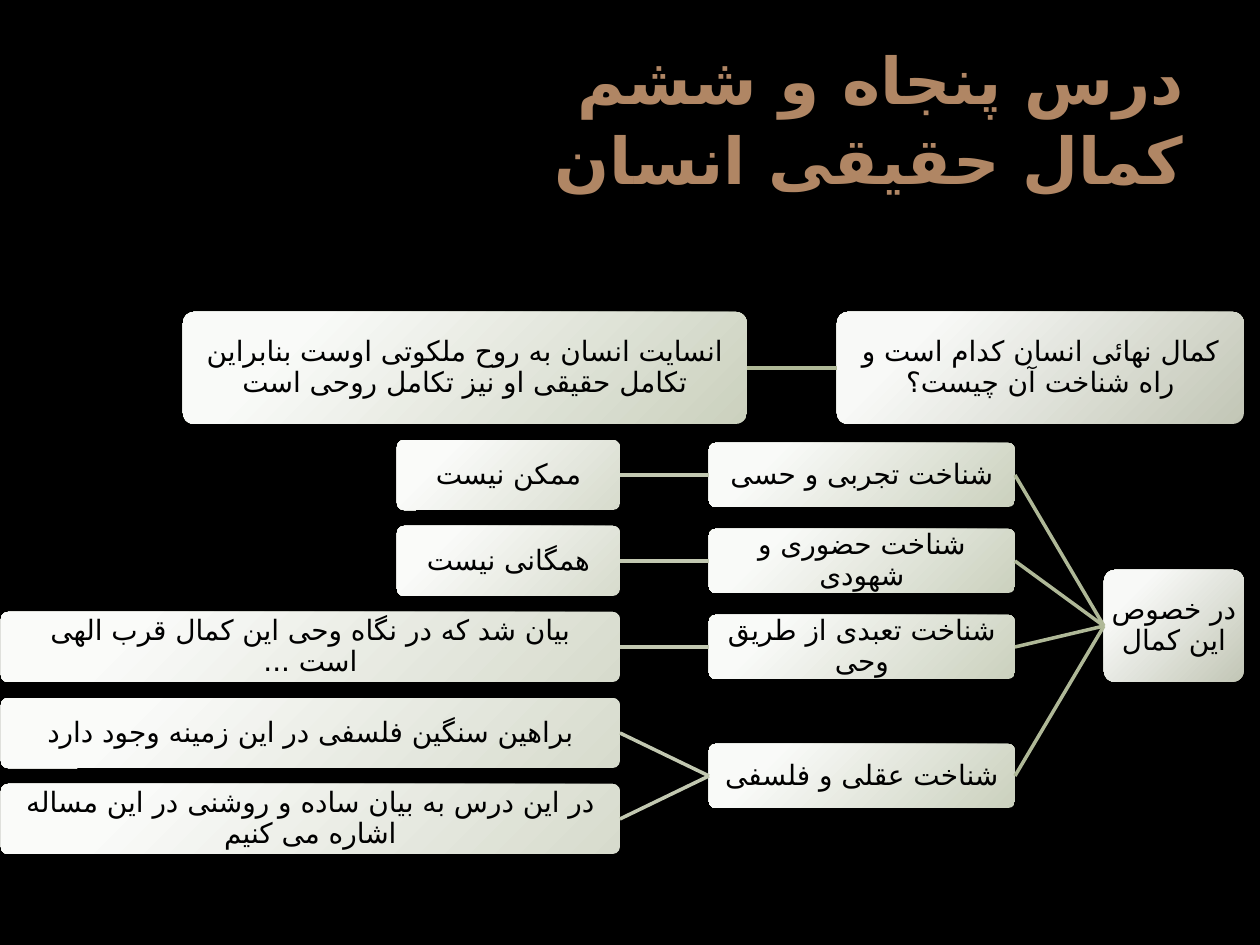
import pptx
import pptx.dml.color
import pptx.enum.shapes
import pptx.enum.text
import pptx.oxml
import pptx.oxml.ns
import pptx.util
from dataclasses import dataclass

SCALE = 914400 // 126
A_NS = pptx.oxml.ns.nsdecls("a")
LEFT, RIGHT = 1, 3


@dataclass(frozen=True)
class Theme:
    background: str = "000000"
    title_color: str = "B08664"
    title_font: str = "Noto Sans"
    title_size: float = 36.9
    title_spacing: float = 1.04
    text_color: str = "000000"
    text_font: str = "Vollkorn"
    text_size: float = 16
    text_spacing: float = 0.92
    persian_font: str = "DejaVu Sans"
    line_width: float = 2
    fills: tuple = (("F8F9F7", "C2C6B6"), ("F9FAF8", "CBD1BE"), ("FAFBF9", "D7DBCD"))
    lines: tuple = ("AFB897", "C2C8B1")


THEME = Theme()

ROOT_HEIGHT, BRANCH_HEIGHT, LEAF_HEIGHT = 112, 64, 70
QUESTION_CENTER = 368
FIRST_CENTER, LEAF_PITCH = 475, 86
BRANCH_X, BRANCH_WIDTH = 709, 306
SHORT_LEAF = (397, 223)
LONG_LEAF = (1, 619)

BRANCHES = [
    ("شناخت تجربی و حسی", [("ممکن نیست", SHORT_LEAF)]),
    ("شناخت حضوری و شهودی", [("همگانی نیست", SHORT_LEAF)]),
    ("شناخت تعبدی از طریق وحی",
     [("بیان شد که در نگاه وحی این کمال قرب الهی است ...", LONG_LEAF)]),
    ("شناخت عقلی و فلسفی",
     [("براهین سنگین فلسفی در این زمینه وجود دارد", LONG_LEAF),
      ("در این درس به بیان ساده و روشنی در این مساله اشاره می کنیم", LONG_LEAF)]),
]


def px(value):
    return pptx.util.Emu(round(value) * SCALE)


def rgb(color):
    return pptx.dml.color.RGBColor.from_string(color)


def add_run(p, text, font, size, color, bold=False):
    r = p.add_run()
    r.text = text
    r.font.name = font
    r.font.size = pptx.util.Pt(size)
    r.font.bold = bold
    r.font.color.rgb = rgb(color)
    r.font._element.append(
        pptx.oxml.parse_xml(f'<a:cs {A_NS} typeface="{THEME.persian_font}"/>'))


def set_rtl(p, alignment, spacing):
    p.alignment = alignment
    p.line_spacing = spacing
    p._p.get_or_add_pPr().set("rtl", "1")


def set_title(s, lines):
    sp = s.shapes.title
    sp.left, sp.top, sp.width, sp.height = px(63), px(38), px(1134), px(158)
    tf = sp.text_frame
    tf.word_wrap = True
    tf.auto_size = pptx.enum.text.MSO_AUTO_SIZE.NONE
    tf.vertical_anchor = pptx.enum.text.MSO_ANCHOR.MIDDLE
    p = tf.paragraphs[0]
    set_rtl(p, pptx.enum.text.PP_ALIGN.RIGHT, THEME.title_spacing)
    for i, line in enumerate(lines):
        if i:
            p.add_line_break()
        add_run(p, line, THEME.title_font, THEME.title_size, THEME.title_color, True)


def set_radial_fill(sp, inner, outer):
    sp.fill.background()
    gradient = pptx.oxml.parse_xml(
        f'<a:gradFill {A_NS} rotWithShape="1"><a:gsLst>'
        f'<a:gs pos="20000"><a:srgbClr val="{inner}"/></a:gs>'
        f'<a:gs pos="100000"><a:srgbClr val="{outer}"/></a:gs></a:gsLst>'
        '<a:path path="circle"><a:fillToRect l="-15000" t="-15000" r="115000" b="115000"/>'
        '</a:path></a:gradFill>')
    spPr = sp._element.spPr
    spPr.replace(spPr.find(pptx.oxml.ns.qn("a:noFill")), gradient)


def add_box(s, text, level, x, center, width, height):
    sp = s.shapes.add_shape(pptx.enum.shapes.MSO_SHAPE.ROUNDED_RECTANGLE,
                            px(x), px(center - height / 2), px(width), px(height))
    sp.adjustments[0] = 0.1
    sp.shadow.inherit = False
    sp.line.fill.background()
    set_radial_fill(sp, *THEME.fills[level])
    tf = sp.text_frame
    tf.word_wrap = True
    tf.vertical_anchor = pptx.enum.text.MSO_ANCHOR.MIDDLE
    tf.margin_left = tf.margin_right = tf.margin_top = tf.margin_bottom = px(1)
    p = tf.paragraphs[0]
    set_rtl(p, pptx.enum.text.PP_ALIGN.CENTER, THEME.text_spacing)
    add_run(p, text, THEME.text_font, THEME.text_size, THEME.text_color)
    return sp


def join(s, parent, child, level):
    c = s.shapes.add_connector(pptx.enum.shapes.MSO_CONNECTOR.STRAIGHT, 0, 0, 0, 0)
    c.begin_connect(parent, LEFT)
    c.end_connect(child, RIGHT)
    c.line.color.rgb = rgb(THEME.lines[level])
    c.line.width = pptx.util.Pt(THEME.line_width)
    c._element.spPr.append(pptx.oxml.parse_xml(f"<a:effectLst {A_NS}/>"))


def add_question(s):
    question = add_box(s, "کمال نهائی انسان کدام است و راه شناخت آن چیست؟",
                       0, 837, QUESTION_CENTER, 407, ROOT_HEIGHT)
    answer = add_box(s, "انسایت انسان به روح ملکوتی اوست بنابراین تکامل حقیقی او نیز تکامل روحی است",
                     1, 183, QUESTION_CENTER, 564, ROOT_HEIGHT)
    join(s, question, answer, 0)


def add_tree(s):
    centers = []
    row = 0
    for _, leaves in BRANCHES:
        centers.append(FIRST_CENTER + LEAF_PITCH * (row + (len(leaves) - 1) / 2))
        row += len(leaves)
    root = add_box(s, "در خصوص این کمال", 0, 1104, (centers[0] + centers[-1]) / 2,
                   140, ROOT_HEIGHT)
    row = 0
    for (text, leaves), center in zip(BRANCHES, centers):
        branch = add_box(s, text, 1, BRANCH_X, center, BRANCH_WIDTH, BRANCH_HEIGHT)
        join(s, root, branch, 0)
        for leaf_text, (x, width) in leaves:
            leaf = add_box(s, leaf_text, 2, x, FIRST_CENTER + LEAF_PITCH * row,
                           width, LEAF_HEIGHT)
            join(s, branch, leaf, 1)
            row += 1


def main():
    prs = pptx.Presentation()
    prs.slide_width, prs.slide_height = px(1260), px(945)
    s = prs.slides.add_slide(prs.slide_layouts[5])
    s.background.fill.solid()
    s.background.fill.fore_color.rgb = rgb(THEME.background)
    set_title(s, ["درس پنجاه و ششم", "کمال حقیقی انسان"])
    add_question(s)
    add_tree(s)
    prs.save("out.pptx")


if __name__ == "__main__":
    main()
